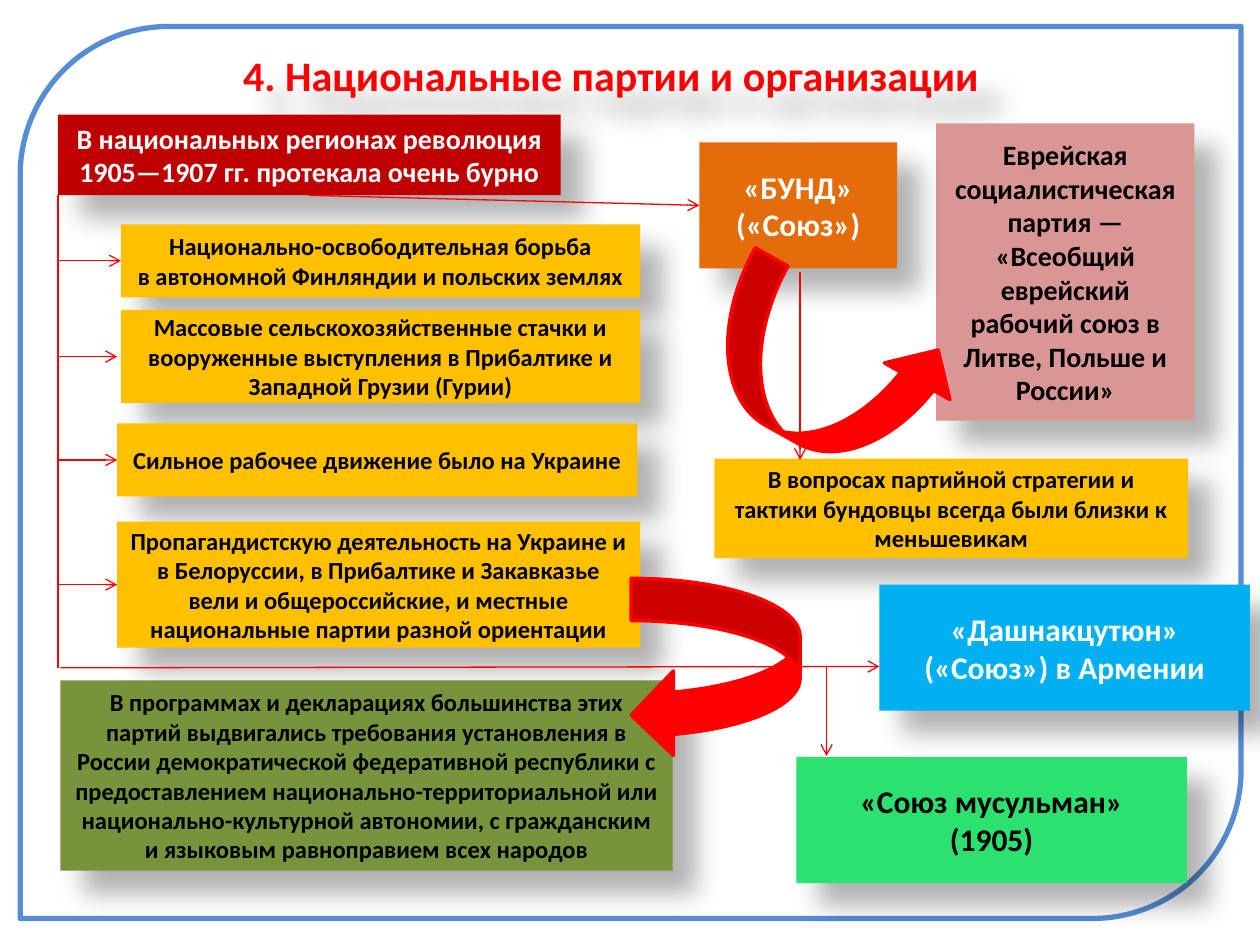
from lxml import etree
from pptx import Presentation
from pptx.dml.color import RGBColor
from pptx.enum.shapes import MSO_CONNECTOR, MSO_SHAPE
from pptx.enum.text import MSO_ANCHOR, PP_ALIGN
from pptx.oxml.ns import qn
from pptx.util import Inches, Pt

RECTANGLE = MSO_SHAPE.RECTANGLE
FRAME = MSO_SHAPE.ROUND_2_DIAG_RECTANGLE
LEFT_ARROW = MSO_SHAPE.CURVED_LEFT_ARROW
UP_ARROW = MSO_SHAPE.CURVED_UP_ARROW
STRAIGHT = MSO_CONNECTOR.STRAIGHT
CENTER = PP_ALIGN.CENTER
MIDDLE = MSO_ANCHOR.MIDDLE
FONT = "Calibri"

COLORS = {
    "red": "FF0000", "dark red": "C00000", "amber": "FFC000",
    "olive": "77933C", "pink": "D99694", "orange": "E46C0A",
    "sky": "00B0F0", "green": "2BE170", "frame": "558ED5",
    "white": "FFFFFF", "black": "000000",
}

TITLE = "4. Национальные партии и организации"

BOXES = [
    ((0.46, 0.91, 3.99, 0.64), "dark red", "white", 16,
     ["В национальных регионах революция 1905—1907 гг. протекала очень бурно"]),
    ((0.96, 1.78, 4.12, 0.58), "amber", "black", 14,
     ["Национально-освободительная борьба",
      "в автономной Финляндии и польских землях"]),
    ((0.96, 2.46, 4.12, 0.74), "amber", "black", 14,
     ["Массовые сельскохозяйственные стачки и вооруженные выступления "
      "в Прибалтике и Западной Грузии (Гурии)"]),
    ((0.93, 3.36, 4.13, 0.58), "amber", "black", 14,
     ["Сильное рабочее движение было на Украине"]),
    ((0.93, 4.14, 4.15, 1), "amber", "black", 14,
     ["Пропагандистскую деятельность на Украине и в Белоруссии, "
      "в Прибалтике и Закавказье вели и общероссийские, и местные "
      "национальные партии разной ориентации"]),
    ((0.48, 5.4, 4.86, 1.51), "olive", "black", 14,
     ["В программах и декларациях большинства этих партий выдвигались "
      "требования установления в России демократической федеративной "
      "республики с предоставлением национально-территориальной или "
      "национально-культурной автономии, с гражданским и языковым "
      "равноправием всех народов"]),
    ((7.43, 0.98, 2.05, 2.36), "pink", "black", 16,
     ["Еврейская социалистическая партия — «Всеобщий еврейский рабочий "
      "союз в Литве, Польше и России»"]),
    ((5.55, 1.13, 1.57, 1), "orange", "white", 18, ["«БУНД» («Союз»)"]),
    ((5.67, 3.64, 3.76, 0.79), "amber", "black", 14,
     ["В вопросах партийной стратегии и тактики бундовцы всегда были "
      "близки к меньшевикам"]),
    ((6.98, 4.64, 2.94, 1), "sky", "white", 18,
     ["«Дашнакцутюн» («Союз») в Армении"]),
    ((6.32, 6.01, 3.1, 1), "green", "black", 18,
     ["«Союз мусульман»", "(1905)"]),
]

CURVED_ARROWS = [
    (LEFT_ARROW, (5.01, 4.59, 1.34, 1.42), 0),
    (UP_ARROW, (5.58, 2.37, 1.96, 1.19), 29.2),
]

TRUNK_X = 0.46
BRANCHES = [(2.07, 0.96), (2.83, 0.93), (3.65, 0.93), (4.64, 0.93)]
LINES = [((TRUNK_X, 1.55, TRUNK_X, 5.3), False)]
LINES += [((TRUNK_X, y, end, y), True) for y, end in BRANCHES]
LINES += [
    ((2.45, 1.55, 5.55, 1.63), True),
    ((0.48, 5.3, 6.98, 5.29), True),
    ((6.56, 5.29, 6.56, 6), True),
    ((6.35, 2.16, 6.35, 3.65), True),
]


def color(name):
    return RGBColor.from_string(COLORS[name])


def add_effects(shape):
    return etree.SubElement(shape._element.spPr, qn("a:effectLst"))


def add_shadow(shape):
    shadow = etree.SubElement(
        add_effects(shape), qn("a:outerShdw"), blurRad=str(Pt(15)),
        dist=str(Pt(18)), dir=str(45 * 60000), algn="tl", rotWithShape="0")
    tint = etree.SubElement(shadow, qn("a:srgbClr"), val=COLORS["black"])
    etree.SubElement(tint, qn("a:alpha"), val="30000")


def write(shape, texts, size, ink):
    frame = shape.text_frame
    frame.word_wrap = True
    frame.vertical_anchor = MIDDLE
    for index, text in enumerate(texts):
        paragraph = frame.add_paragraph() if index else frame.paragraphs[0]
        paragraph.alignment = CENTER
        run = paragraph.add_run()
        run.text = text
        run.font.name = FONT
        run.font.size = Pt(size)
        run.font.bold = True
        run.font.color.rgb = color(ink)


def add_shape(slide, kind, place, fill=None, line=None, width=0):
    shape = slide.shapes.add_shape(kind, *map(Inches, place))
    if fill:
        shape.fill.solid()
        shape.fill.fore_color.rgb = color(fill)
    else:
        shape.fill.background()
    if line:
        shape.line.color.rgb = color(line)
        shape.line.width = Pt(width)
    else:
        shape.line.fill.background()
    return shape


def add_line(slide, ends, has_head):
    connector = slide.shapes.add_connector(STRAIGHT, *map(Inches, ends))
    connector.line.color.rgb = color("red")
    connector.line.width = Pt(0.75)
    if has_head:
        etree.SubElement(connector.line._get_or_add_ln(), qn("a:tailEnd"), type="arrow")
    add_effects(connector)


def main():
    presentation = Presentation()
    presentation.slide_width = Inches(10)
    presentation.slide_height = Inches(7.5)
    slide = presentation.slides.add_slide(presentation.slide_layouts[5])

    frame = add_shape(slide, FRAME, (0.16, 0.21, 9.69, 7.08), line="frame", width=3)
    frame.shadow.inherit = False

    title = slide.shapes.title
    title.left, title.top = Inches(0.35), Inches(0.36)
    title.width, title.height = Inches(9), Inches(0.47)
    write(title, [TITLE], 24, "red")
    add_shadow(title)

    for place, fill, ink, size, texts in BOXES:
        box = add_shape(slide, RECTANGLE, place, fill)
        add_shadow(box)
        write(box, texts, size, ink)

    for kind, place, angle in CURVED_ARROWS:
        arrow = add_shape(slide, kind, place, "red", "red", 2)
        arrow.rotation = angle
        arrow.shadow.inherit = False

    for ends, has_head in LINES:
        add_line(slide, ends, has_head)

    presentation.save("out.pptx")


if __name__ == "__main__":
    main()
